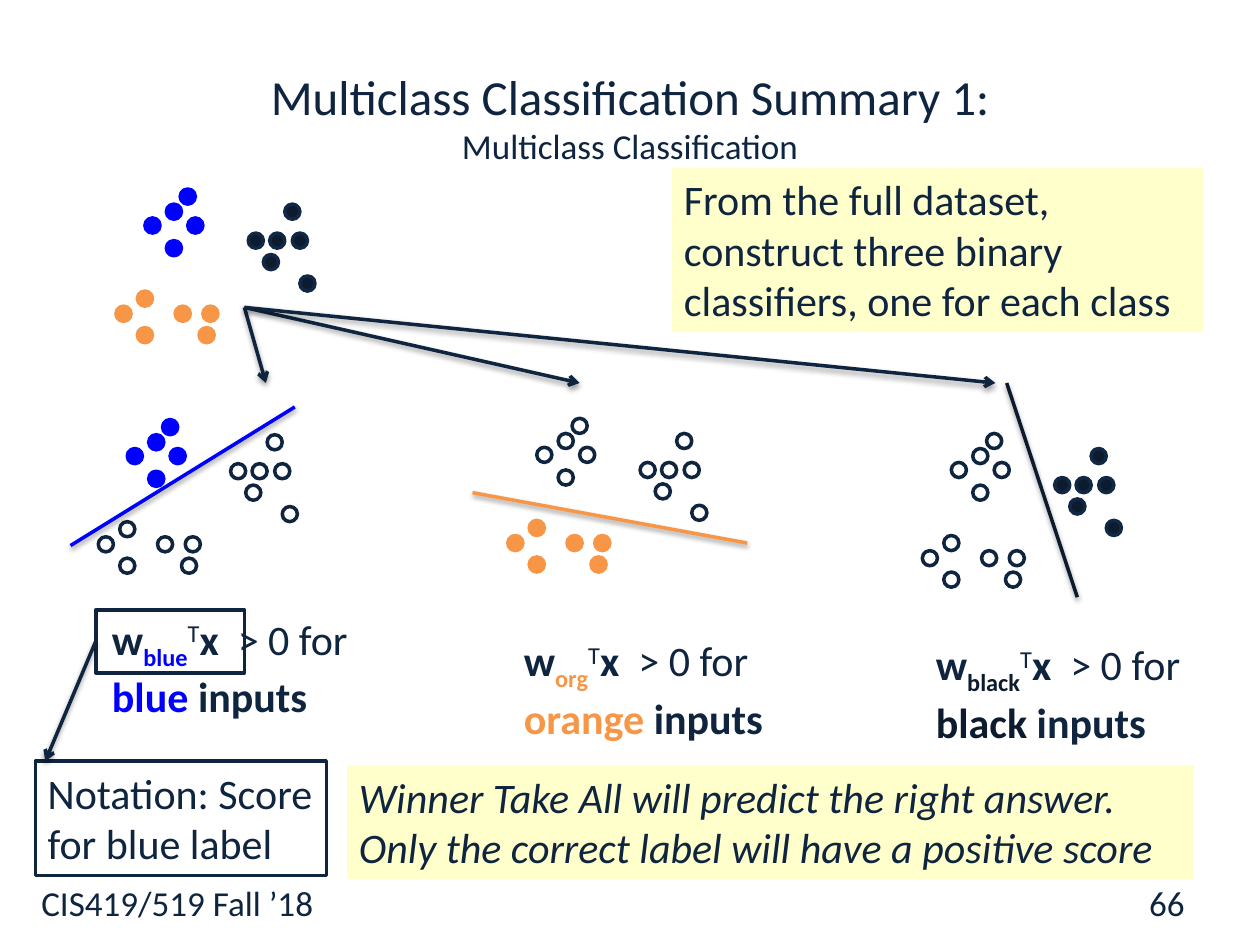
from dataclasses import dataclass

from lxml.etree import SubElement
from pptx import Presentation
from pptx.dml.color import RGBColor
from pptx.enum.shapes import MSO_CONNECTOR, MSO_SHAPE
from pptx.enum.text import MSO_ANCHOR, MSO_AUTO_SIZE, PP_ALIGN
from pptx.oxml.ns import qn
from pptx.util import Inches, Pt


@dataclass(frozen=True)
class Theme:
    font: str = "Calibri"
    ink: str = "0F243E"
    blue: str = "0000FF"
    orange: str = "F79646"
    black: str = "0C1B2E"
    black_edge: str = "112845"
    white: str = "FFFFFF"
    note: str = "FFFFCC"
    title: int = 28
    body: int = 24
    small: int = 20
    line: float = 2
    hairline: float = 0.75


THEME = Theme()
DOT = 0.12
CLASS_STYLES = {
    "blue": (THEME.blue, THEME.blue),
    "orange": (THEME.orange, THEME.orange),
    "black": (THEME.black, THEME.black_edge),
}
EMPTY_STYLE = (THEME.white, THEME.ink)
# Dot offsets from the top left corner of a scatter
CLASS_DOTS = {
    "blue": [(0.4, 0.12), (0.51, 0), (0.23, 0.23), (0.57, 0.23), (0.4, 0.41)],
    "orange": [(0.69, 0.93), (0.17, 0.81), (0.47, 0.93), (0, 0.93),
               (0.66, 1.1), (0.17, 1.1)],
    "black": [(1.17, 0.52), (1.46, 0.69), (1.34, 0.12), (1.05, 0.35),
              (1.4, 0.35), (1.22, 0.35)],
}


def inches(*values):
    return [Inches(value) for value in values]


def color(value):
    return RGBColor.from_string(value)


def style_font(font, size, ink=THEME.ink):
    font.name = THEME.font
    font.size = Pt(size)
    font.color.rgb = color(ink)


def add_box(shapes, kind, box, fill, edge, width=THEME.line):
    shape = shapes.add_shape(kind, *inches(*box))
    shape.shadow.inherit = False
    if fill:
        shape.fill.solid()
        shape.fill.fore_color.rgb = color(fill)
    else:
        shape.fill.background()
    shape.line.color.rgb = color(edge)
    shape.line.width = Pt(width)
    return shape


def write(shape, text, size=THEME.body, align=PP_ALIGN.LEFT,
          anchor=MSO_ANCHOR.TOP, italic=None):
    frame = shape.text_frame
    frame.word_wrap = True
    frame.vertical_anchor = anchor
    paragraph = frame.paragraphs[0]
    paragraph.text = text
    paragraph.alignment = align
    style_font(paragraph.font, size)
    paragraph.font.italic = italic


def add_line(shapes, start, end, ink=THEME.ink, arrow=False):
    """Draw a straight line with a soft shadow straight below it."""
    line = shapes.add_connector(MSO_CONNECTOR.STRAIGHT, *inches(*start, *end))
    line.line.color.rgb = color(ink)
    line.line.width = Pt(THEME.line)
    if arrow:
        SubElement(line.line._get_or_add_ln(), qn("a:tailEnd"), type="arrow")
    effects = SubElement(line._element.spPr, qn("a:effectLst"))
    shadow = SubElement(effects, qn("a:outerShdw"), blurRad=str(Pt(3.1)),
                        dist=str(Pt(1.6)), dir="5400000", rotWithShape="0")
    shade = SubElement(shadow, qn("a:srgbClr"), val="000000")
    SubElement(shade, qn("a:alpha"), val="38000")
    return line


def add_scatter(shapes, left, top, filled):
    for name, dots in CLASS_DOTS.items():
        fill, edge = CLASS_STYLES[name] if name in filled else EMPTY_STYLE
        for x, y in dots:
            add_box(shapes, MSO_SHAPE.OVAL, (left + x, top + y, DOT, DOT),
                    fill, edge)


def add_score_label(shapes, box, name, subscript, ink):
    """Write the score rule, as (text, colour, bold, baseline) runs."""
    frame = shapes.add_textbox(*inches(*box)).text_frame
    frame.word_wrap = True
    paragraph = frame.paragraphs[0]
    for text, run_ink, bold, baseline in [
        ("w", THEME.ink, True, 0),
        (subscript, ink, True, -25),
        ("T", THEME.ink, False, 30),
        ("x ", THEME.ink, True, 0),
        (" > 0 for ", THEME.ink, False, 0),
        (name, ink, True, 0),
        (" inputs", THEME.ink, True, 0),
    ]:
        run = paragraph.add_run()
        run.text = text
        style_font(run.font, THEME.body, run_ink)
        run.font.bold = bold
        if baseline:
            run.font._element.set("baseline", str(baseline * 1000))


def add_classifier(slide, left, top, name, subscript, start, end, label):
    """Place one binary classifier; start, end and label are relative to it."""
    shapes = slide.shapes.add_group_shape().shapes
    ink = CLASS_STYLES[name][0]
    add_scatter(shapes, left, top, [name])
    add_line(shapes, (left + start[0], top + start[1]),
             (left + end[0], top + end[1]), ink)
    x, y, width = label
    add_score_label(shapes, (left + x, top + y, width, 0.91),
                    name, subscript, ink)


def add_note(slide, box, text, italic=None):
    note = add_box(slide.shapes, MSO_SHAPE.RECTANGLE, box, THEME.note,
                   THEME.white, THEME.hairline)
    write(note, text, italic=italic)


def add_notation(slide, left, top):
    shapes = slide.shapes.add_group_shape().shapes
    caption = add_box(shapes, MSO_SHAPE.RECTANGLE, (left, top + 1.2, 2.31, 0.91),
                      THEME.white, THEME.ink)
    write(caption, "Notation: Score for blue label")
    score_frame = add_box(shapes, MSO_SHAPE.RECTANGLE,
                          (left + 0.48, top, 1.18, 0.5), None, THEME.ink)
    arrow = add_line(shapes, (left + 0.48, top + 0.25),
                     (left + 0.08, top + 1.2), arrow=True)
    arrow.begin_connect(score_frame, 1)


def add_title(slide, box):
    title = slide.shapes.title
    title.left, title.top, title.width, title.height = inches(*box)
    write(title, "Multiclass Classification Summary 1:", THEME.title,
          PP_ALIGN.CENTER, MSO_ANCHOR.MIDDLE)
    title.text_frame.auto_size = MSO_AUTO_SIZE.NONE
    paragraph = title.text_frame.paragraphs[0]
    paragraph.add_line_break()
    subtitle = paragraph.add_run()
    subtitle.text = "Multiclass Classification"
    subtitle.font.size = Pt(THEME.small)


def add_footer(slide, left, top):
    course = slide.shapes.add_textbox(*inches(left, top, 6.5, 0.5))
    write(course, "CIS419/519 Fall ’18", THEME.small)
    number = slide.shapes.add_textbox(*inches(left + 6.94, top, 2.33, 0.42))
    write(number, "66", THEME.small, PP_ALIGN.RIGHT, MSO_ANCHOR.MIDDLE)


def main():
    presentation = Presentation()
    presentation.slide_width, presentation.slide_height = inches(10, 7.5)
    slide = presentation.slides.add_slide(presentation.slide_layouts[5])

    add_footer(slide, 0.23, 6.95)
    add_title(slide, (0.5, 0.3, 9, 1.25))
    add_scatter(slide.shapes.add_group_shape().shapes, 0.92, 1.5, CLASS_DOTS)
    add_note(slide, (5.33, 1.33, 4.23, 1.31),
             "From the full dataset, construct three binary classifiers, "
             "one for each class")
    add_classifier(slide, 0.78, 3.33, "blue", "blue",
                   (-0.22, 1), (1.56, -0.1), (0.01, 1.49, 2.18))
    add_classifier(slide, 4.03, 3.32, "orange", "org",
                   (-0.28, 0.59), (1.9, 0.99), (0.03, 1.67, 2.46))
    add_classifier(slide, 7.32, 3.44, "black", "black",
                   (0.67, -0.4), (1.23, 1.3), (0.01, 1.58, 2.5))
    add_note(slide, (2.75, 6.07, 6.73, 0.91),
             "Winner Take All will predict the right answer. "
             "Only the correct label will have a positive score", italic=True)
    add_notation(slide, 0.28, 4.84)
    for x in (2.11, 4.6, 7.9):
        add_line(slide.shapes, (1.94, 2.44), (x, 3.04), arrow=True)
    presentation.save("out.pptx")


if __name__ == "__main__":
    main()
